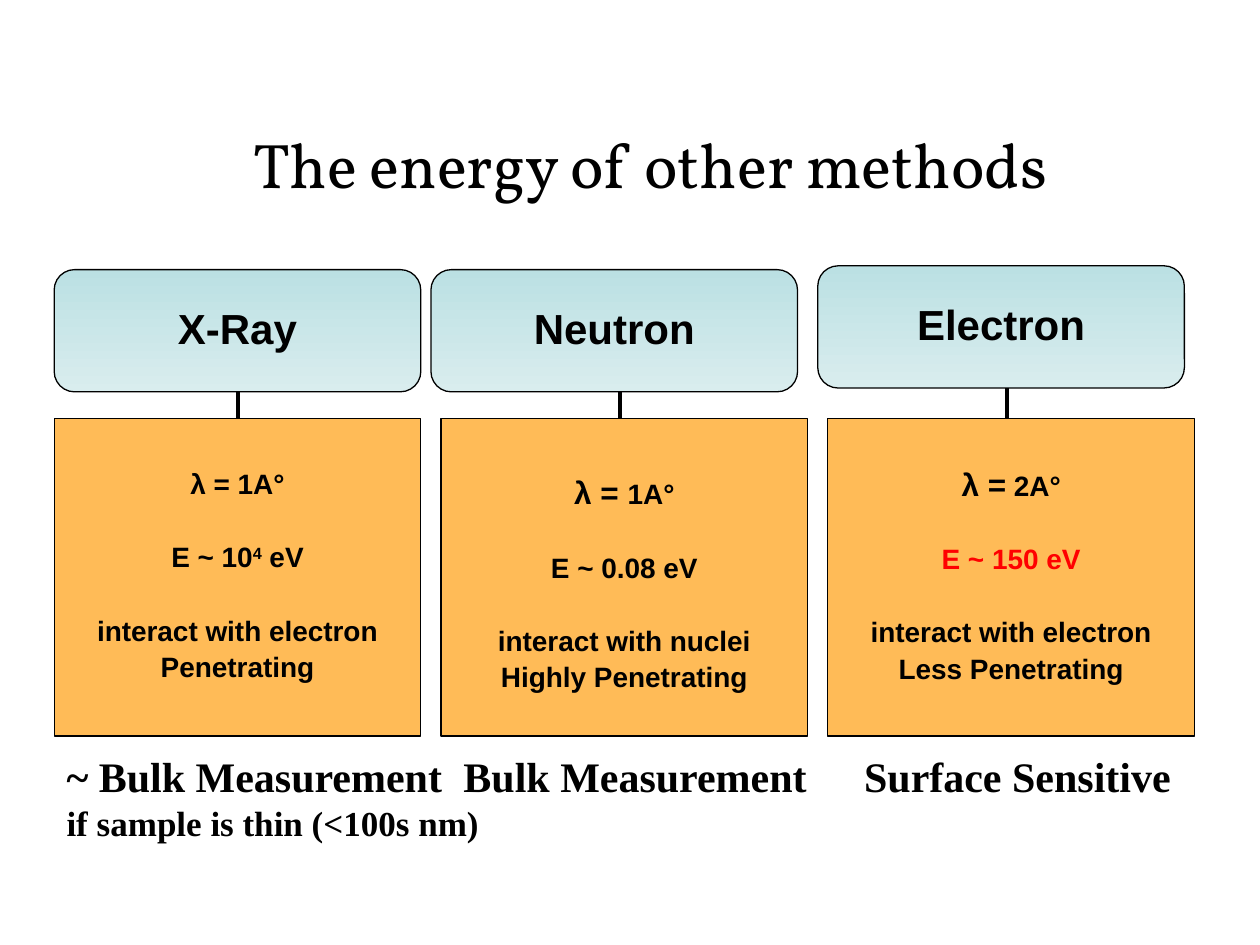
import pptx
import pptx.util
import pptx.dml.color
import pptx.enum.shapes
import pptx.enum.text
import pptx.oxml
import pptx.oxml.ns
import lxml.etree

Inches, Pt = pptx.util.Inches, pptx.util.Pt
Align, Anchor = pptx.enum.text.PP_ALIGN, pptx.enum.text.MSO_ANCHOR
qn = pptx.oxml.ns.qn

SMALL, GAP = 3.5, 24.5  # points above a close line and above a set-off line


def color(text):
    return pptx.dml.color.RGBColor.from_string(text)


def assign(item, values):
    for key, value in values.items():
        setattr(item, key, value)


class Deck:
    ink, red, box = "000000", "FF0000", "FFBB57"
    shade = ("BBE0E3", "D9EDEE")
    sans, serif, head = "Arial", "Times New Roman", "Vollkorn"

    def __init__(self):
        self.file = pptx.Presentation()
        assign(self.file, {"slide_width": Inches(10), "slide_height": Inches(7.5)})
        self.slide = self.file.slides.add_slide(self.file.slide_layouts[5])

    def words(self, para, text, size, font, bold=True, ink=None, base=0):
        """Add a run; base raises it by that percentage."""
        run = para.add_run()
        run.text = text
        assign(run.font, {"size": Pt(size), "name": font, "bold": bold})
        run.font.color.rgb = color(ink or self.ink)
        if base:
            run._r.get_or_add_rPr().set("baseline", str(base * 1000))

    def title(self, text, left, top, width, height):
        shape = self.slide.shapes.title
        assign(shape, {"left": Inches(left), "top": Inches(top),
                       "width": Inches(width), "height": Inches(height)})
        shape.text_frame.vertical_anchor = Anchor.MIDDLE
        para = shape.text_frame.paragraphs[0]
        para.alignment = Align.CENTER
        self.words(para, text, 36, self.head, bold=False)

    def panel(self, left, top, width, height, round, lines, fill=None, drop=0):
        """Draw a box with centred lines of (space before, runs); drop lowers the text."""
        kind = pptx.enum.shapes.MSO_SHAPE.ROUNDED_RECTANGLE
        shape = self.slide.shapes.add_shape(
            kind, Inches(left), Inches(top), Inches(width), Inches(height))
        shape.adjustments[0] = round
        shape.shadow.inherit = False
        if fill:
            shape.fill.solid()
            shape.fill.fore_color.rgb = color(fill)
        else:
            shape.fill.gradient()
            shape.fill.gradient_angle = 270
            for stop, tint, place in zip(shape.fill.gradient_stops, self.shade, (0, 1)):
                stop.color.rgb = color(tint)
                stop.position = place
        shape.line.color.rgb = color(self.ink)
        shape.line.width = Pt(0.75)
        frame = shape.text_frame
        assign(frame, {"word_wrap": False, "vertical_anchor": Anchor.MIDDLE,
                       "margin_top": Inches(0.04 + drop), "margin_bottom": Inches(0.04)})
        for i, (space, runs) in enumerate(lines):
            para = frame.add_paragraph() if i else frame.paragraphs[0]
            assign(para, {"alignment": Align.CENTER, "line_spacing": 0.9,
                          "space_before": Pt(space)})
            for text, size, style in runs:
                self.words(para, text, size, self.sans, **style)

    def link(self, x, low, high):
        line = self.slide.shapes.add_connector(
            pptx.enum.shapes.MSO_CONNECTOR.STRAIGHT,
            Inches(x), Inches(low), Inches(x), Inches(high))
        line.line.color.rgb = color(self.ink)
        line.line.width = Pt(2.25)
        lxml.etree.SubElement(line._element.spPr, qn("a:effectLst"))

    def notes(self, left, top, width, height, lines, tabs):
        """Add text lines whose columns start at the tab stops."""
        shape = self.slide.shapes.add_textbox(
            Inches(left), Inches(top), Inches(width), Inches(height))
        frame = shape.text_frame
        assign(frame, {"word_wrap": True,
                       "auto_size": pptx.enum.text.MSO_AUTO_SIZE.SHAPE_TO_FIT_TEXT})
        for i, (text, size) in enumerate(lines):
            para = frame.add_paragraph() if i else frame.paragraphs[0]
            self.words(para, text, size, self.serif)
            stops = lxml.etree.SubElement(
                para._p.get_or_add_pPr(), qn("a:tabLst"))
            for tab in tabs:
                lxml.etree.SubElement(stops, qn("a:tab"),
                                      pos=str(int(Inches(tab))), algn="l")


def main():
    deck = Deck()
    wide, tall, cap, top = 2.91, 2.52, 0.97, 3.32
    # name, cap left, cap top, link x, link end, text drop, wave, energy, effects
    methods = [
        ("X-Ray", 0.43, 2.14, 1.89, 3.11, 0,
         [("λ = 1A°", 16, {})],
         [("E ~ 10", 16, {}), ("4", 16, {"base": 30}), (" eV", 16, {})],
         ("interact with electron", "Penetrating")),
        ("Neutron", 3.42, 2.14, 4.92, 3.08, 0.13,
         [("λ = ", 18, {}), ("1A°", 16, {})],
         [("E ~ 0.08 eV", 16, {})],
         ("interact with nuclei", "Highly Penetrating")),
        ("Electron", 6.49, 2.11, 7.99, 3.08, 0,
         [("λ =", 18, {}), (" 2A°", 16, {})],
         [("E ~ 150 eV", 16, {"ink": deck.red})],
         ("interact with electron", "Less Penetrating")),
    ]
    for i, (name, left, high, x, end, drop, wave, energy, effects) in enumerate(methods):
        deck.link(x, top, end)
        deck.panel(left, high, wide, cap, 0.167, [(SMALL, [(name, 24, {})])])
        lines = [(SMALL, wave), (GAP, energy)]
        lines += [(space, [(text, 16, {})])
                  for space, text in zip((GAP, SMALL), effects)]
        deck.panel(0.43 + 3.07 * i, top, wide, tall, 0, lines, deck.box, drop)

    deck.title("The energy of other methods", 1.33, 0.46, 7.67, 1.67)
    deck.notes(0.43, 5.91, 9.06, 0.84,
               [("~ Bulk Measurement\tBulk Measurement\tSurface Sensitive", 24),
                ("if sample is thin (<100s nm)", 20)], (3.15, 6.33))
    deck.file.save("out.pptx")


if __name__ == "__main__":
    main()
